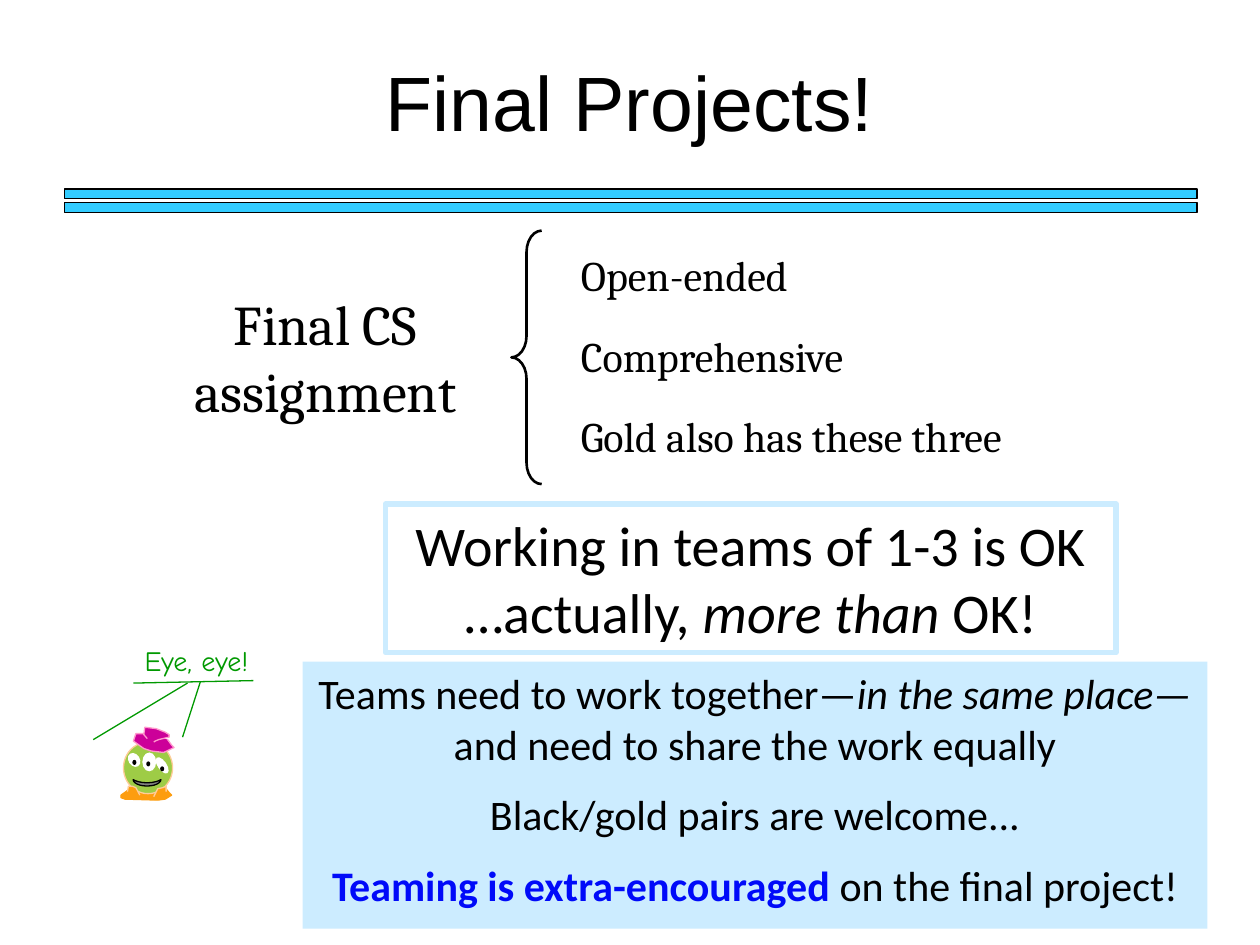
import pptx
import pptx.util
import pptx.dml.color
import pptx.enum.shapes
import pptx.enum.text
import pptx.oxml.ns
import lxml.etree

Cm, Pt = pptx.util.Cm, pptx.util.Pt
SHAPE = pptx.enum.shapes.MSO_SHAPE
ALIGN = pptx.enum.text.PP_ALIGN
ANCHOR = pptx.enum.text.MSO_ANCHOR
BLACK, WHITE, PALE, GREEN = "000000", "FFFFFF", "CCECFF", "009900"
ORANGE, PINK = "FD9D0F", "CC0099"


def rgb(value):
    return pptx.dml.color.RGBColor.from_string(value)


def paint(sp, fill=None, line=None, width=0.75):
    sp.shadow.inherit = False
    if fill:
        sp.fill.solid()
        sp.fill.fore_color.rgb = rgb(fill)
    else:
        sp.fill.background()
    if line:
        sp.line.color.rgb = rgb(line)
        sp.line.width = Pt(width)
    else:
        sp.line.fill.background()


def add_shape(s, kind, box, fill=None, line=None, width=0.75, rotation=0):
    sp = s.shapes.add_shape(kind, *map(Cm, box))
    sp.rotation = rotation
    paint(sp, fill, line, width)
    return sp


def add_outline(s, x, y, points, fill, line, close=False):
    (x0, y0), *rest = [(Cm(px), Cm(py)) for px, py in points]
    fb = s.shapes.build_freeform(x0, y0)
    fb.add_line_segments(rest, close=close)
    paint(fb.convert_to_shape(Cm(x), Cm(y)), fill, line)


def add_line(s, start, end, color):
    c = s.shapes.add_connector(
        pptx.enum.shapes.MSO_CONNECTOR.STRAIGHT, *map(Cm, start + end))
    c.line.color.rgb = rgb(color)
    c.line.width = Pt(0.75)
    lxml.etree.SubElement(c._element.spPr, pptx.oxml.ns.qn("a:effectLst"))


def write(sp, paragraphs, font, size, align=ALIGN.CENTER, color=BLACK,
          wrap=True, anchor=ANCHOR.TOP, gap=0):
    tf = sp.text_frame
    tf.word_wrap = wrap
    tf.vertical_anchor = anchor
    for i, runs in enumerate(paragraphs):
        p = tf.add_paragraph() if i else tf.paragraphs[0]
        p.alignment = align
        p.space_before = Pt(gap if i else 0)
        for text, extra in runs:
            r = p.add_run()
            r.text = text
            fmt = {"name": font, "size": Pt(size), "color": color, **extra}
            r.font.color.rgb = rgb(fmt.pop("color"))
            for key, value in fmt.items():
                setattr(r.font, key, value)


def add_text(s, box, text, font, size, **options):
    sp = s.shapes.add_textbox(*map(Cm, box))
    write(sp, [[(text, {})]], font, size, **options)


def header(s, x, y, w, h):
    for i in range(2):
        add_shape(s, SHAPE.RECTANGLE, (x, y + 3.38 + 0.28 * i, w, 0.2),
                  "33CCFF", BLACK)
    title = s.shapes.title
    place = {"left": x + 0.6, "top": y, "width": w - 1.24, "height": h}
    for key, value in place.items():
        setattr(title, key, Cm(value))
    write(title, [[("Final Projects!", {})]], "Arial", 44, anchor=ANCHOR.MIDDLE)


def assignment(s, x, y, w, h):
    add_text(s, (x, y + 1.06, 6.78, 3), "Final CS assignment", "Cambria", 32)
    brace = add_shape(s, SHAPE.LEFT_BRACE, (x + 7.14, y, 0.61, h),
                      line=BLACK, width=1.5)
    brace.adjustments[0] = 0.71
    traits = ["Open-ended", "Comprehensive", "Gold also has these three"]
    for i, trait in enumerate(traits):
        add_text(s, (x + 8.29, y + 0.25 + 1.63 * i, w - 8.29, 1.27), trait,
                 "Cambria", 24, align=ALIGN.LEFT)


def team_size(s, *box):
    sp = add_shape(s, SHAPE.RECTANGLE, box, line=PALE, width=3)
    write(sp, [[("Working in teams of 1-3 is OK", {})],
               [("…actually, ", {}), ("more than", {"italic": True}),
                (" OK!", {})]], "Calibri", 32)


def team_rules(s, *box):
    sp = add_shape(s, SHAPE.RECTANGLE, box, PALE)
    write(sp, [[("Teams need to work together—", {}),
                ("in the same place—", {"italic": True}),
                ("and need to share the work equally", {})],
               [("Black/gold pairs are welcome...", {})],
               [("Teaming is extra-encouraged ",
                 {"color": "000AF9", "bold": True}),
                ("on the final project!", {})]], "Calibri", 24, gap=11.5)


def alien(s, x, y):
    def oval(left, top, w, h, fill, line=None, rotation=0):
        add_shape(s, SHAPE.OVAL, (x + left, y + top, w, h), fill, line,
                  rotation=rotation)

    feet = [(0.51, 1.14), (0.69, 1.14), (0.89, 1.22), (0.97, 1.32),
            (1.02, 1.37), (0.89, 1.45), (0.74, 1.47), (0.08, 1.45),
            (0, 1.42), (0, 1.37), (0.1, 1.3), (0.2, 1.22), (0.28, 1.19),
            (0.38, 1.12)]
    brim = [(0.51, 0.13), (0.3, 0.13), (0.25, 0.28), (0.46, 0.43),
            (0.61, 0.48), (0.86, 0.51), (1.07, 0.41), (1.02, 0.36),
            (0.94, 0.25)]
    crown = [(0.53, 0.23), (0.46, 0.15), (0.48, 0), (0.71, 0.03),
             (0.89, 0.1), (0.97, 0.15), (0.97, 0.2), (0.76, 0.25),
             (0.69, 0.28), (0.66, 0.3)]
    left_toe = [(0.13, 1.3), (0.15, 1.19), (0.23, 1.19), (0.3, 1.22),
                (0.38, 1.37)]
    right_toe = [(0.91, 1.3), (0.91, 1.19), (0.84, 1.22), (0.74, 1.24),
                 (0.66, 1.4)]
    add_outline(s, x, y, feet, ORANGE, ORANGE, close=True)
    oval(0.05, 0.3, 0.99, 1.04, "9ECC46", "FFCC99")
    for *eye, rotation in [(0.15, 0.51, 0.23, 0.3, 327.2),
                           (0.43, 0.51, 0.28, 0.38, 0),
                           (0.74, 0.58, 0.18, 0.38, 325.5)]:
        oval(*eye, WHITE, rotation=rotation)
    for left, top in [(0.23, 0.66), (0.51, 0.69), (0.79, 0.79)]:
        oval(left, top, 0.08, 0.1, BLACK)
    add_shape(s, SHAPE.MOON, (x + 0.46, y + 0.84, 0.13, 0.56), "808080",
              BLACK, rotation=270)
    for points, fill, line in [(brim, PINK, "FF99CC"),
                               (crown, PINK, "FF99CC"),
                               (left_toe, ORANGE, "FFCC99"),
                               (right_toe, ORANGE, "FFCC99")]:
        add_outline(s, x, y, points, fill, line)


def speaker(s, x, y):
    alien(s, x + 0.56, y + 1.81)
    add_text(s, (x + 0.66, y, 2.84, 0.94), "Eye, eye!", "Comic Neue", 16,
             color=GREEN, wrap=False)
    for x1, y1, x2, y2 in [(1.8, 2.01, 2.16, 0.89), (0, 2.06, 1.9, 0.92),
                           (0.81, 0.92, 3.23, 0.87)]:
        add_line(s, (x + x1, y + y1), (x + x2, y + y2), GREEN)


def main():
    prs = pptx.Presentation()
    prs.slide_width, prs.slide_height = Cm(25.4), Cm(19.05)
    s = prs.slides.add_slide(prs.slide_layouts[5])
    header(s, 1.3, 0.43, 22.83, 3.18)
    assignment(s, 3.17, 4.65, 19.92, 5.11)
    team_size(s, 7.77, 10.16, 14.73, 3)
    team_rules(s, 6.1, 13.34, 18.24, 5.38)
    speaker(s, 1.88, 12.85)
    prs.save("out.pptx")


if __name__ == "__main__":
    main()
